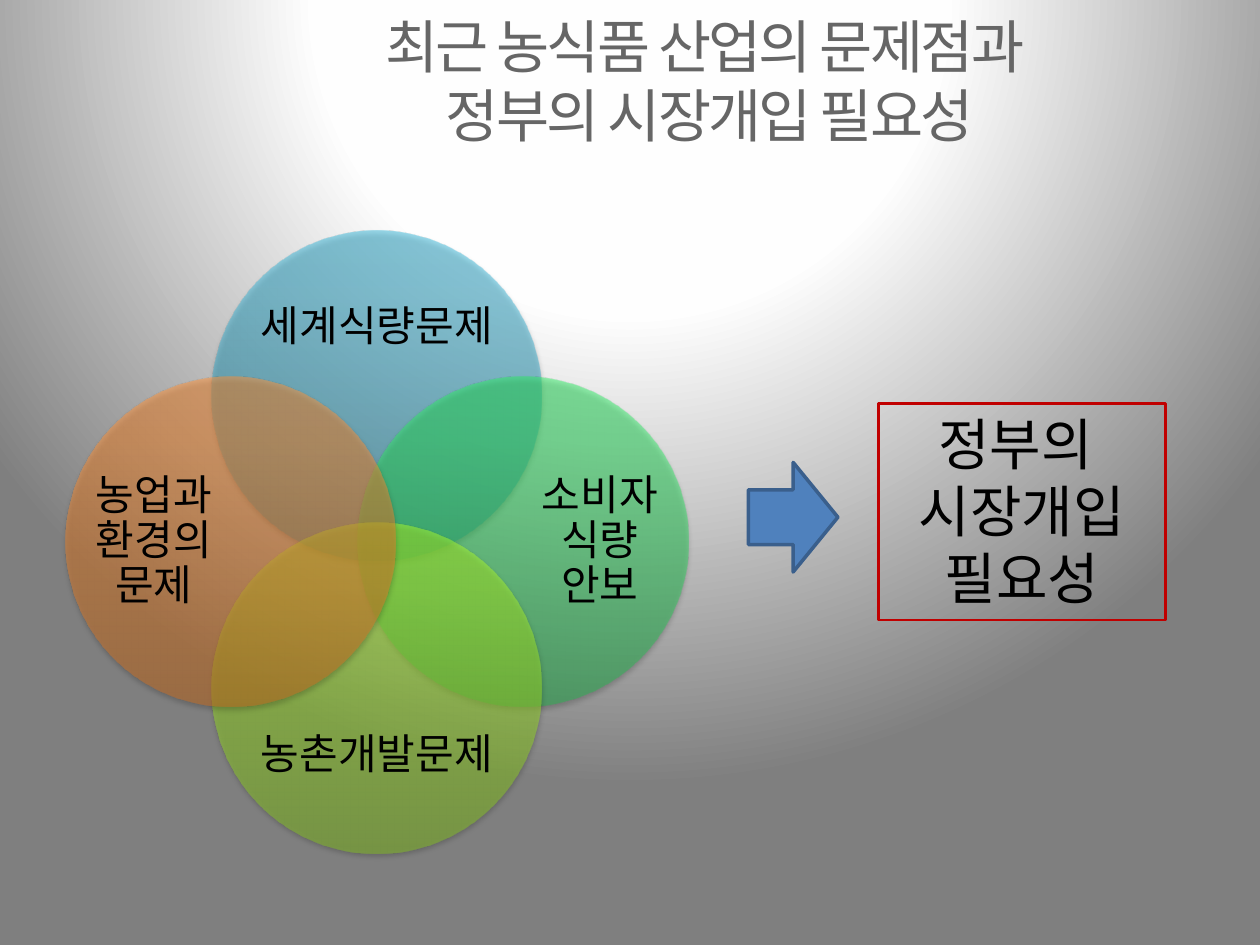
"""Build a slide on food industry problems and the need for government intervention."""
from dataclasses import dataclass

from lxml.etree import SubElement
from pptx import Presentation
from pptx.dml.color import RGBColor
from pptx.enum.shapes import MSO_SHAPE as Shape
from pptx.enum.text import MSO_ANCHOR as Anchor, MSO_AUTO_SIZE as AutoSize, PP_ALIGN as Align
from pptx.oxml import parse_xml
from pptx.oxml.ns import nsdecls, qn
from pptx.util import Inches, Pt

FONT = "Noto Sans CJK KR"
COLORS = {
    "title": "666666",
    "text": "000000",
    "arrow": "4F81BD",
    "arrow_line": "3A5F8C",
    "frame": "C00000",
}
BACKGROUND = {0: "FFFFFF", 40: "FEFEFE", 100: "7F7F7F"}
CENTER_X, CENTER_Y = 2.99, 4.3
DIAMETER = 2.62
CIRCLE_OFFSET = 1.16


@dataclass
class Circle:
    """One Venn circle, its direction from the center and its label."""
    label: str
    dx: int
    dy: int
    stops: dict[int, str]


CIRCLES = [
    Circle("세계식량문제", 0, -1, {0: "2A88A2", 80: "37B1D2", 100: "34B4D6"}),
    Circle("소비자 식량 안보", 1, 0, {0: "25B24E", 80: "30E765", 100: "2DEB64"}),
    Circle("농촌개발문제", 0, 1, {0: "85C022", 80: "ADF92C", 100: "AFFE28"}),
    Circle("농업과 환경의 문제", -1, 0, {0: "CC6E20", 80: "FF9034", 100: "FF9136"}),
]


def rgb(name: str) -> RGBColor:
    """Look up a named color."""
    return RGBColor.from_string(COLORS[name])


def set_gradient(owner, fill, stops: dict[int, str], direction: str, alpha: int = 100) -> None:
    """Give the owner element a gradient fill."""
    fill.solid()
    solid = next(owner.iter(qn("a:solidFill")))
    marks = "".join(
        f'<a:gs pos="{position * 1000}"><a:srgbClr val="{color}">'
        f'<a:alpha val="{alpha * 1000}"/></a:srgbClr></a:gs>'
        for position, color in stops.items()
    )
    gradient = parse_xml(
        f'<a:gradFill {nsdecls("a")} rotWithShape="1"><a:gsLst>{marks}</a:gsLst>{direction}</a:gradFill>'
    )
    solid.getparent().replace(solid, gradient)


def format_text(frame, lines: list[str], size: int, color: str = "text") -> None:
    """Write centered paragraphs in the slide font."""
    frame.text = "\n".join(lines)
    for para in frame.paragraphs:
        para.alignment = Align.CENTER
        para.font.size = Pt(size)
        para.font.name = FONT
        para.font.color.rgb = rgb(color)
        properties = para.font._element
        SubElement(properties, qn("a:ea")).set("typeface", FONT)
        for span in para.runs:
            SubElement(span.font._element, qn("a:ea")).set("typeface", FONT)


def add_title(slide) -> None:
    """Place and format the title."""
    title = slide.shapes.title
    title.left, title.top = Inches(1.3), Inches(0.2)
    title.width, title.height = Inches(8.67), Inches(0.87)
    frame = title.text_frame
    frame.auto_size = AutoSize.NONE
    frame.vertical_anchor = Anchor.MIDDLE
    format_text(frame, ["최근 농식품 산업의 문제점과 \v정부의 시장개입 필요성"], 33, "title")
    for span in frame.paragraphs[0].runs:
        span.font._element.set("spc", "-150")


def add_circle(slide, circle: Circle) -> None:
    """Draw one translucent circle with its label."""
    left = CENTER_X + circle.dx * CIRCLE_OFFSET - DIAMETER / 2
    top = CENTER_Y + circle.dy * CIRCLE_OFFSET - DIAMETER / 2
    disc = slide.shapes.add_shape(
        Shape.OVAL, Inches(left), Inches(top), Inches(DIAMETER), Inches(DIAMETER)
    )
    disc.line.fill.background()
    disc.shadow.inherit = False
    properties = disc._element.spPr
    set_gradient(properties, disc.fill, circle.stops, '<a:lin ang="16200000" scaled="0"/>', 50)
    properties.find(qn("a:effectLst")).append(parse_xml(
        f'<a:outerShdw {nsdecls("a")} blurRad="{Pt(3.1)}" dist="{Pt(1.8)}" dir="5400000" '
        'rotWithShape="0"><a:srgbClr val="000000"><a:alpha val="35000"/></a:srgbClr></a:outerShdw>'
    ))

    width, height = (1.01, 2.02) if circle.dx else (2.02, 0.83)
    label_x = CENTER_X + circle.dx * 1.77
    label_y = CENTER_Y + circle.dy * 1.7
    box = slide.shapes.add_textbox(
        Inches(label_x - width / 2), Inches(label_y - height / 2), Inches(width), Inches(height)
    )
    frame = box.text_frame
    frame.word_wrap = True
    frame.vertical_anchor = Anchor.MIDDLE
    frame.margin_left = frame.margin_right = frame.margin_top = frame.margin_bottom = 0
    format_text(frame, [circle.label], 24)
    frame.paragraphs[0].line_spacing = 0.9


def add_arrow(slide) -> None:
    """Draw the arrow towards the conclusion."""
    arrow = slide.shapes.add_shape(
        Shape.RIGHT_ARROW, Inches(5.94), Inches(3.67), Inches(0.71), Inches(0.87)
    )
    arrow.shadow.inherit = False
    arrow.fill.solid()
    arrow.fill.fore_color.rgb = rgb("arrow")
    arrow.line.color.rgb = rgb("arrow_line")
    arrow.line.width = Pt(2)


def add_conclusion(slide) -> None:
    """Add the framed conclusion."""
    box = slide.shapes.add_textbox(Inches(6.97), Inches(3.2), Inches(2.28), Inches(1.72))
    box.line.color.rgb = rgb("frame")
    box.line.width = Pt(1.5)
    box.text_frame.word_wrap = True
    box.text_frame.auto_size = AutoSize.SHAPE_TO_FIT_TEXT
    format_text(box.text_frame, ["정부의 ", "시장개입", "필요성"], 32)


def main() -> None:
    """Build and save the deck."""
    deck = Presentation()
    deck.slide_width, deck.slide_height = Inches(10), Inches(7.5)
    page = deck.slides.add_slide(deck.slide_layouts[5])
    focus = '<a:path path="circle"><a:fillToRect l="50000" t="-80000" r="50000" b="180000"/></a:path>'
    set_gradient(page.element, page.background.fill, BACKGROUND, focus)
    add_title(page)
    for circle in CIRCLES:
        add_circle(page, circle)
    add_arrow(page)
    add_conclusion(page)
    deck.save("out.pptx")


if __name__ == "__main__":
    main()
